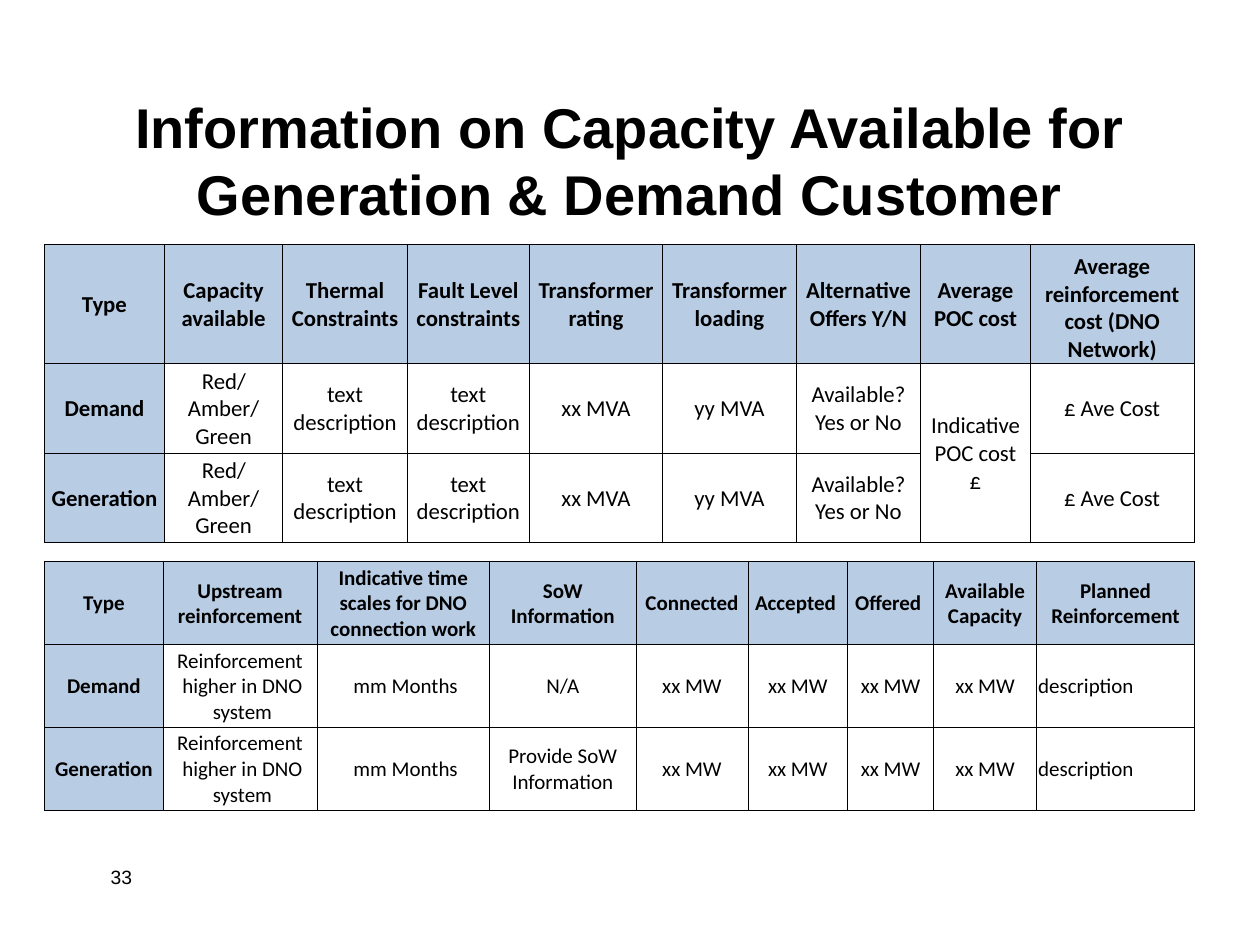
from copy import deepcopy

from lxml import etree
from pptx import Presentation
from pptx.dml.color import RGBColor
from pptx.enum.text import MSO_ANCHOR, PP_ALIGN
from pptx.oxml.ns import qn
from pptx.util import Cm, Pt

LEFT, CENTER = PP_ALIGN.LEFT, PP_ALIGN.CENTER
TOP, MIDDLE, BOTTOM = MSO_ANCHOR.TOP, MSO_ANCHOR.MIDDLE, MSO_ANCHOR.BOTTOM
COLORS = {"ink": "000000", "head": "B8CCE4"}
PAD = Cm(0.03)

STATE_HEAD = ["Type", "Capacity available", "Thermal Constraints",
              "Fault Level constraints", "Transformer rating",
              "Transformer loading", "Alternative Offers Y/N",
              "Average POC cost", "Average reinforcement cost (DNO Network)"]
STATE = ["Red/Amber/Green", "text description", "text description", "xx MVA",
         "yy MVA", "Available?\nYes or No"]
COST = "£ Ave Cost"
STATE_ROWS = [STATE_HEAD,
              ["Demand", *STATE, "Indicative POC cost\n£", COST],
              ["Generation", *STATE, "", COST]]
STATE_COLS = [2.41, 2.39, 2.51, 2.46, 2.69, 2.69, 2.51, 2.21, 3.3]

WORK_HEAD = ["Type", "Upstream reinforcement",
             "Indicative time scales for DNO connection work",
             "SoW Information", "Connected", "Accepted ", "Offered ",
             "Available Capacity", "Planned Reinforcement"]
WORK = ["Reinforcement\n higher in DNO\n system", " mm Months"]
LOADS = ["xx MW"] * 4 + ["description"]
WORK_ROWS = [WORK_HEAD,
             ["Demand", *WORK, "N/A", *LOADS],
             ["Generation", *WORK, "Provide SoW Information", *LOADS]]
WORK_COLS = [2.39, 3.1, 3.48, 2.95, 2.26, 2.01, 1.73, 2.08, 3.18]


def write(frame, text, font="Arial", size=11, bold=False, align=LEFT,
          anchor=TOP):
    frame.word_wrap = True
    frame.vertical_anchor = anchor
    para = frame.paragraphs[0]
    para.alignment = align
    for i, line in enumerate(text.split("\n")):
        if i:
            para.add_line_break()
        run = para.add_run()
        run.text = line
        run.font.name = font
        run.font.size = Pt(size)
        run.font.bold = bold
        run.font.color.rgb = RGBColor.from_string(COLORS["ink"])
    # Line breaks take the format of the text around them
    for gap in para._p.findall(qn("a:br")):
        gap.append(deepcopy(run._r.rPr))


def border(cell):
    props = cell._tc.get_or_add_tcPr()
    for side in ("lnL", "lnR", "lnT", "lnB"):
        line = etree.SubElement(props, qn("a:" + side), w=str(Pt(0.5)))
        fill = etree.SubElement(line, qn("a:solidFill"))
        etree.SubElement(fill, qn("a:srgbClr"), val=COLORS["ink"])


class Deck:
    def __init__(self):
        self.prs = Presentation()
        self.prs.slide_width, self.prs.slide_height = Cm(25.4), Cm(19.05)
        self.slide = self.prs.slides.add_slide(self.prs.slide_layouts[5])

    def title(self, text, x, y, w, h):
        shape = self.slide.shapes.title
        shape.left, shape.top, shape.width, shape.height = map(
            Cm, (x, y, w, h))
        write(shape.text_frame, text, size=32, bold=True, align=CENTER,
              anchor=MIDDLE)

    def label(self, text, x, y, w, h):
        box = self.slide.shapes.add_textbox(*map(Cm, (x, y, w, h)))
        write(box.text_frame, text)

    def table(self, rows, cols, highs, x, y, size):
        grid = self.slide.shapes.add_table(
            len(rows), len(cols), Cm(x), Cm(y), Cm(sum(cols)),
            Cm(sum(highs))).table
        for col, wide in zip(grid.columns, cols):
            col.width = Cm(wide)
        for row, high in zip(grid.rows, highs):
            row.height = Cm(high)
        for r, row in enumerate(rows):
            for c, text in enumerate(row):
                self.cell(grid.cell(r, c), text, size, r == 0 or c == 0)
        return grid

    def cell(self, cell, text, size, head):
        border(cell)
        if head:
            cell.fill.solid()
            cell.fill.fore_color.rgb = RGBColor.from_string(COLORS["head"])
        else:
            cell.fill.background()
        cell.margin_left = cell.margin_right = cell.margin_top = PAD
        cell.margin_bottom = 0
        align = LEFT if text == "description" else CENTER
        write(cell.text_frame, text, "Calibri", size, head, align)
        cell.vertical_anchor = MIDDLE


def main():
    deck = Deck()
    deck.label("33", 1.98, 17.32, 5.28, 1.27)
    deck.title("Information on Capacity Available for "
               "Generation & Demand Customer", 1.9, 1.52, 21.6, 3.4)
    state = deck.table(STATE_ROWS, STATE_COLS, [2.4, 1.8, 1.8], 0.9, 4.93, 13)
    state.cell(1, 7).merge(state.cell(2, 7))
    state.cell(0, 8).vertical_anchor = BOTTOM
    deck.table(WORK_ROWS, WORK_COLS, [1.67] * 3, 0.9, 11.32, 12)
    deck.prs.save("out.pptx")


if __name__ == "__main__":
    main()
